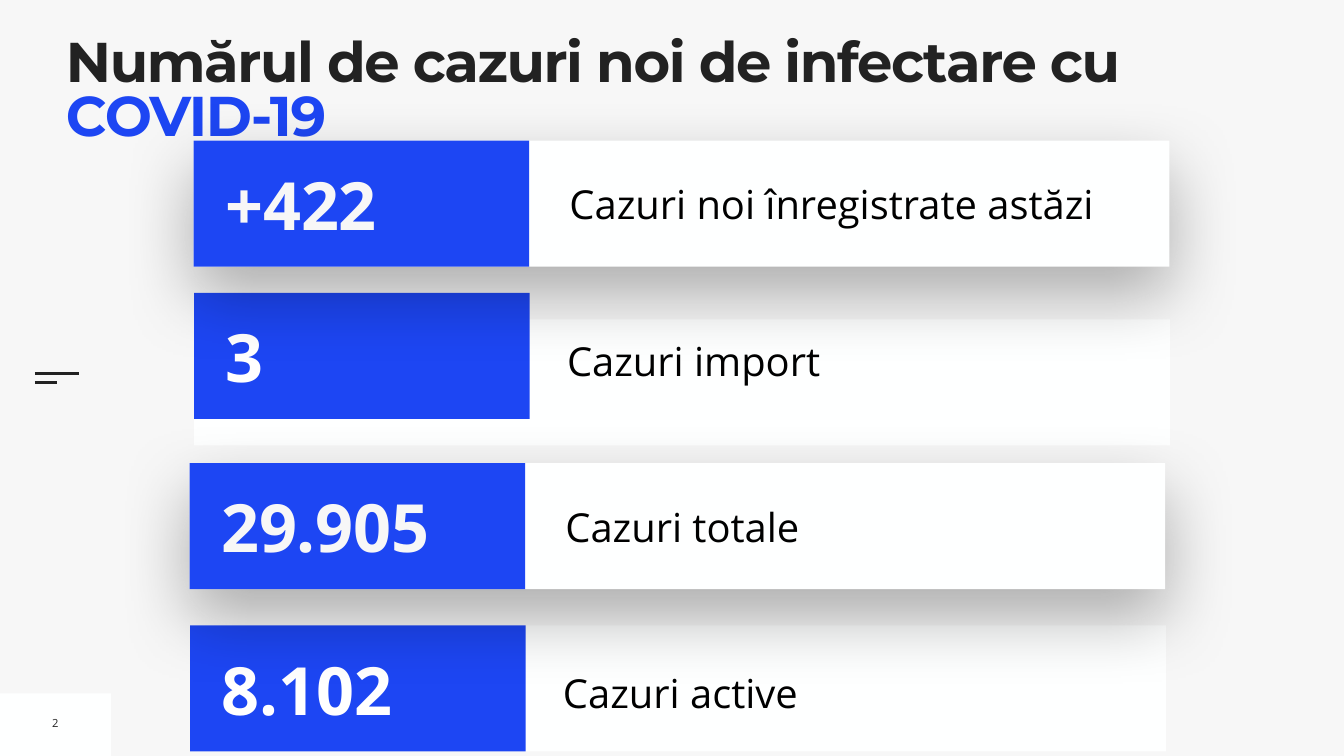
"""Build a slide of daily COVID-19 case counts, with lengths in percent of the slide."""
from dataclasses import dataclass

from lxml import etree
from pptx import Presentation
from pptx.dml.color import RGBColor
from pptx.enum.shapes import MSO_CONNECTOR, MSO_SHAPE
from pptx.enum.text import MSO_ANCHOR, PP_ALIGN
from pptx.oxml.ns import qn
from pptx.util import Emu, Inches, Pt

RECT, LINE = MSO_SHAPE.RECTANGLE, MSO_CONNECTOR.STRAIGHT
TOP, MIDDLE = MSO_ANCHOR.TOP, MSO_ANCHOR.MIDDLE
CENTER = PP_ALIGN.CENTER
WIDE, HIGH = Inches(26.67), Inches(15)
SANS, HEAD = "Open Sans", "Montserrat"
HUES = {"back": "F7F7F7", "card": "FEFFFF", "blue": "1D46F3",
        "ink": "222222", "black": "000000", "white": "FFFFFF"}


@dataclass
class Box:
    left: float
    top: float
    wide: float
    high: float

    def emu(self) -> tuple:
        return across(self.left), down(self.top), across(self.wide), down(self.high)


@dataclass
class Row:
    count: str
    label: str
    left: float
    top: float
    drop: float = 0
    raised: bool = False


ROWS = [
    Row("3", "Cazuri import", 14.44, 38.73, drop=3.53),
    Row("8.102", "Cazuri active", 14.14, 82.73),
    Row("+422", "Cazuri noi înregistrate astăzi", 14.4, 18.6, raised=True),
    Row("29.905", "Cazuri totale", 14.1, 61.27, raised=True),
]


def across(share: float) -> Emu:
    return Emu(round(WIDE * share / 100))


def down(share: float) -> Emu:
    return Emu(round(HIGH * share / 100))


def hue(name: str) -> RGBColor:
    return RGBColor.from_string(HUES[name])


def cast(shape) -> None:
    """Give the shape a soft shadow below it."""
    glow = shape._element.spPr.find(qn("a:effectLst"))
    outer = etree.SubElement(glow, qn("a:outerShdw"), blurRad=str(Pt(100)),
                             dist=str(Pt(40)), dir="5400000", rotWithShape="0")
    tint = etree.SubElement(outer, qn("a:srgbClr"), val=HUES["black"])
    etree.SubElement(tint, qn("a:alpha"), val="30000")


def block(slide, box: Box, fill: str):
    """Draw a plain filled rectangle."""
    shape = slide.shapes.add_shape(RECT, *box.emu())
    shape.shadow.inherit = False
    shape.fill.solid()
    shape.fill.fore_color.rgb = hue(fill)
    shape.line.fill.background()
    return shape


def rule(slide, left: float, right: float, top: float) -> None:
    """Draw a thin level line."""
    line = slide.shapes.add_connector(LINE, across(left), down(top), across(right), down(top))
    line.line.color.rgb = hue("ink")
    line.line.width = Pt(3)
    etree.SubElement(line._element.spPr, qn("a:effectLst"))


def write(slide, box: Box, text: str, size: float, color: str, font: str = SANS,
          bold: bool = False, inset: float = 0.1, anchor=MIDDLE, wrap: bool = True):
    """Place one paragraph of text and return it."""
    frame = slide.shapes.add_textbox(*box.emu()).text_frame
    frame.word_wrap, frame.vertical_anchor = wrap, anchor
    frame.margin_left = frame.margin_right = Inches(inset)
    frame.margin_top = frame.margin_bottom = Inches(inset)
    para = frame.paragraphs[0]
    para.add_run().text = text
    face = para.font
    face.name, face.size, face.bold = font, Pt(size), bold
    face.color.rgb = hue(color)
    return para


def entry(slide, row: Row) -> None:
    """Draw one card with its count and label."""
    left, top = row.left, row.top
    card = block(slide, Box(left, top + row.drop, 72.6, 16.67), "card")
    if row.raised:
        cast(card)
        write(slide, Box(left + 27.6, top + 4.47, 44.09, 7.73), row.label, 57, "black")
    else:
        para = write(slide, Box(left + 27.75, top + 3.8, 43.42, 8.33),
                     row.label, 57, "black", inset=0)
        para.line_spacing, para.space_before = 1.3, Pt(20)
    block(slide, Box(left, top, 24.97, 16.67), "blue")
    write(slide, Box(left + 1.99, top + 2.33, 22.61, 12), row.count, 95,
          "back" if row.raised else "white", bold=True)


def title(slide) -> None:
    """Write the two-colour heading."""
    para = write(slide, Box(4.91, 5.2, 89.76, 10.53),
                 "Numărul de cazuri noi de infectare cu ", 80, "ink",
                 HEAD, True, 0, TOP)
    para.line_spacing = 0.8
    name = para.add_run()
    name.text = "COVID-19"
    name.font.color.rgb = hue("blue")
    for run in para.runs:
        run.font._element.set("spc", "-200")


def main() -> None:
    deck = Presentation()
    deck.slide_width, deck.slide_height = WIDE, HIGH
    slide = deck.slides.add_slide(deck.slide_layouts[6])
    slide.background.fill.solid()
    slide.background.fill.fore_color.rgb = hue("back")
    block(slide, Box(0, 91.73, 8.25, 8.27), "card")
    rule(slide, 2.6, 5.9, 49.4)
    rule(slide, 2.6, 4.25, 50.6)
    page = write(slide, Box(3.49, 93.93, 1.27, 3.4), "2", 16, "ink", wrap=False)
    page.alignment = CENTER
    entry(slide, ROWS[0])
    title(slide)
    for row in ROWS[1:]:
        entry(slide, row)
    deck.save("out.pptx")


if __name__ == "__main__":
    main()
